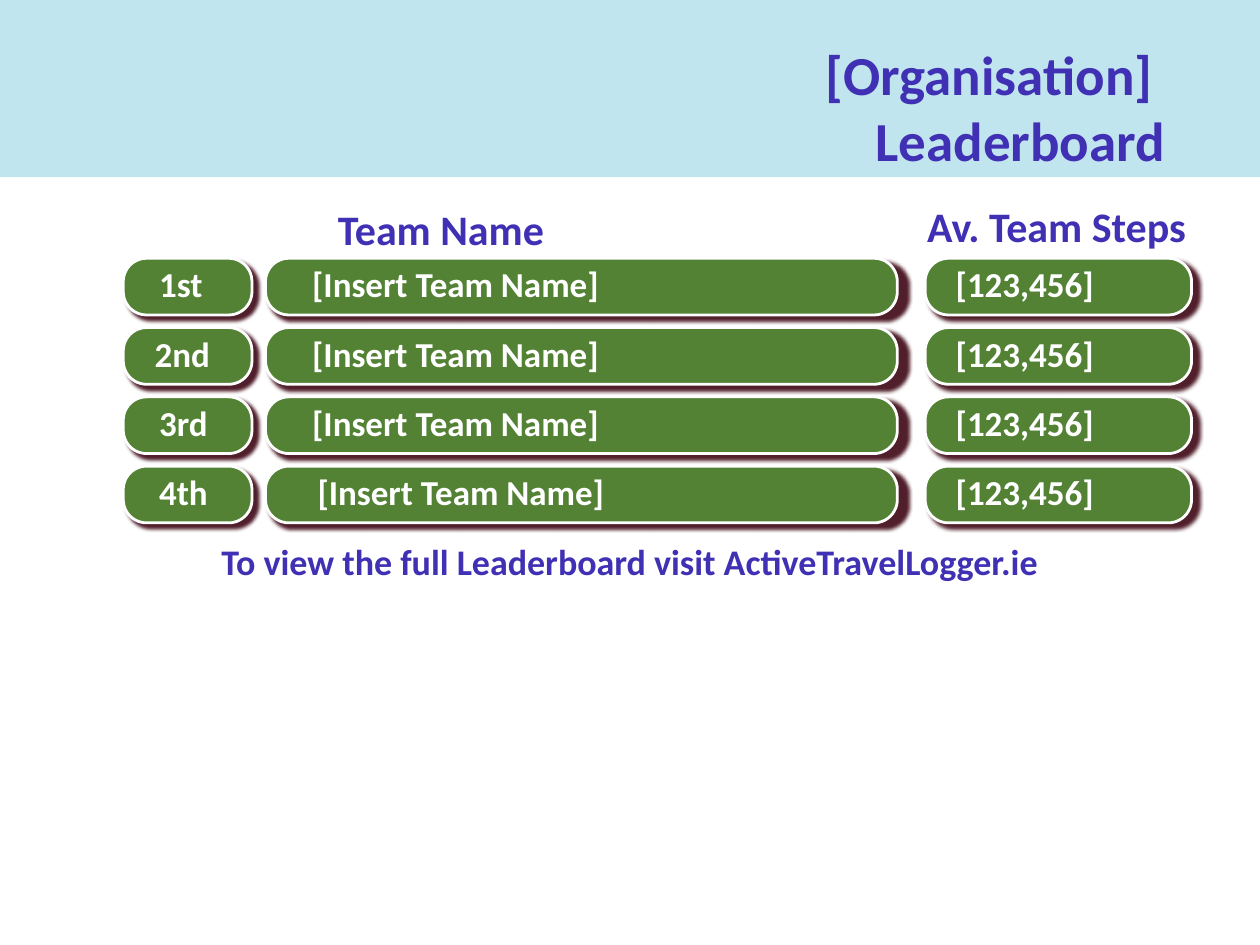
"""Build the team leaderboard slide."""
from dataclasses import dataclass

from lxml import etree
from pptx import Presentation
from pptx.dml.color import RGBColor
from pptx.enum import shapes, text
from pptx.oxml import ns
from pptx.util import Inches, Pt

INK, GREEN, WHITE, SKY, WINE = "4030B4", "548235", "FFFFFF", "C1E5EF", "471320"
TOP, STEP, HIGH = 2.87, 0.77, 0.63
ALIGN = text.PP_ALIGN


@dataclass
class Column:
    left: float
    width: float
    inset: float
    span: float
    labels: list[str]
    shifts: tuple[float, ...] = (0, 0, 0, 0)


COLUMNS = [
    Column(10.28, 2.96, 0.24, 2.11, ["[123,456]"] * 4),
    Column(2.95, 7.02, 0.42, 6.37, ["[Insert Team Name]"] * 4, (0, 0, 0, 0.06)),
    Column(1.37, 1.43, 0.3, 1.02, ["1st", "2nd", "3rd", "4th"], (0, -0.05, 0, 0)),
]


def paint(target, color: str) -> None:
    target.solid()
    target.fore_color.rgb = RGBColor.from_string(color)


def write(frame, words: str, size: float = 28, color: str = WHITE, align=ALIGN.LEFT) -> None:
    frame.word_wrap = True
    frame.auto_size = text.MSO_AUTO_SIZE.NONE
    frame.text = words
    for para in frame.paragraphs:
        para.alignment = align
        font = para.runs[0].font
        font.name, font.size, font.bold = "Calibri", Pt(size), True
        font.color.rgb = RGBColor.from_string(color)


def label(slide, words: str, left: float, top: float, width: float, height: float, **style) -> None:
    box = slide.shapes.add_textbox(Inches(left), Inches(top), Inches(width), Inches(height))
    write(box.text_frame, words, **style)


def shade(shape) -> None:
    shape.shadow.inherit = False
    effects = shape._element.spPr.find(ns.qn("a:effectLst"))
    outer = etree.SubElement(
        effects, ns.qn("a:outerShdw"), blurRad=str(Pt(3)), dist=str(Pt(4.7)),
        dir="2700000", sx="101000", sy="101000", algn="tl", rotWithShape="0")
    color = etree.SubElement(outer, ns.qn("a:srgbClr"), val=WINE)
    etree.SubElement(color, ns.qn("a:alpha"), val="94000")


def pill(slide, left: float, top: float, width: float) -> None:
    shape = slide.shapes.add_shape(
        shapes.MSO_SHAPE.ROUNDED_RECTANGLE,
        Inches(left), Inches(top), Inches(width), Inches(HIGH))
    shape.adjustments[0] = 0.41
    paint(shape.fill, GREEN)
    paint(shape.line.fill, WHITE)
    shape.line.width = Pt(2.25)
    shade(shape)


def header(slide) -> None:
    band = slide.shapes.add_shape(shapes.MSO_SHAPE.RECTANGLE, 0, 0, Inches(14), Inches(1.97))
    paint(band.fill, SKY)
    band.line.fill.background()
    band.shadow.inherit = False
    title = slide.shapes.title
    band._element.addnext(title._element)
    title.left, title.top = Inches(5.32), Inches(0.4)
    title.width, title.height = Inches(7.73), Inches(1.58)
    title.text_frame.vertical_anchor = text.MSO_ANCHOR.TOP
    write(title.text_frame, "[Organisation] \nLeaderboard", size=44, color=INK, align=ALIGN.RIGHT)


def main() -> None:
    deck = Presentation()
    deck.slide_width, deck.slide_height = Inches(14), Inches(10.5)
    slide = deck.slides.add_slide(deck.slide_layouts[5])
    header(slide)
    head = {"color": INK, "align": ALIGN.CENTER}
    label(slide, "Team Name", 1.16, 2.21, 7.48, 0.67, size=33.6, **head)
    label(slide, "Av. Team Steps", 10.15, 2.18, 3.18, 0.67, size=33.6, **head)
    for col in COLUMNS:
        for row in range(len(col.labels)):
            pill(slide, col.left, TOP + row * STEP, col.width)
    for col in reversed(COLUMNS):
        for row, (words, shift) in enumerate(zip(col.labels, col.shifts)):
            label(slide, words, col.left + col.inset + shift, TOP + row * STEP, col.span, 0.57)
    label(slide, "To view the full Leaderboard visit ActiveTravelLogger.ie",
          0.67, 5.95, 12.66, 0.59, size=28.8, **head)
    deck.save("out.pptx")


if __name__ == "__main__":
    main()
